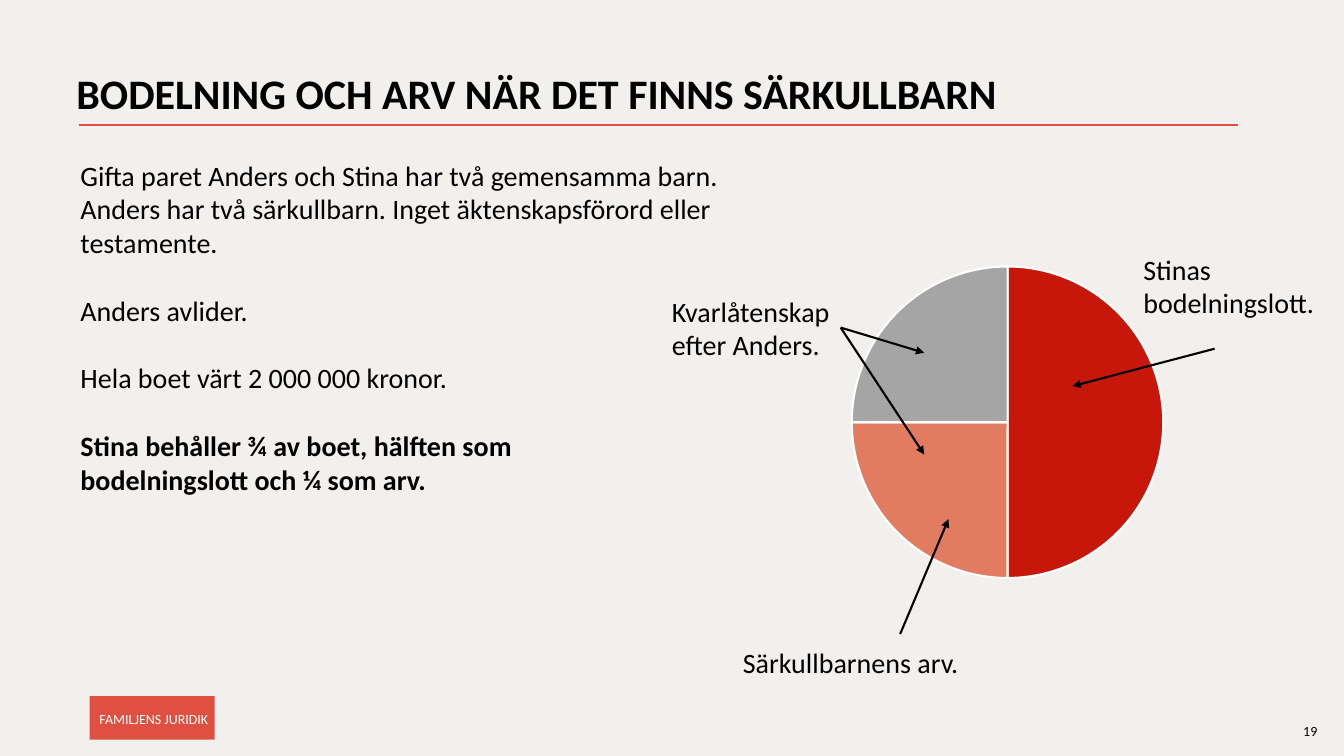
from dataclasses import dataclass

from lxml.etree import SubElement
from pptx import Presentation
from pptx.chart.data import CategoryChartData
from pptx.dml.color import RGBColor
from pptx.enum.chart import XL_CHART_TYPE
from pptx.enum.shapes import MSO_CONNECTOR, MSO_SHAPE
from pptx.enum.text import MSO_ANCHOR
from pptx.oxml import parse_xml
from pptx.oxml.ns import nsdecls, qn
from pptx.slide import Slide
from pptx.text.text import TextFrame
from pptx.util import Pt

FONT = "Calibri"
BLACK, WHITE = "000000", "FFFFFF"
PAPER, ACCENT = "F1F0EC", "E05040"
LINE_GAP = 24.4


@dataclass
class Para:
    lines: tuple[str, ...]
    bold: bool = False


@dataclass
class Block:
    left: float
    top: float
    width: float
    height: float
    paras: tuple[Para, ...]
    size: float = 20
    color: str = BLACK
    # left, top, right, bottom
    insets: tuple[float, float, float, float] = (7.2, 3.6, 7.2, 3.6)
    spacing: float = 1.0
    fill: str = ""


@dataclass
class Stroke:
    start: tuple[float, float]
    end: tuple[float, float]
    color: str = BLACK
    arrow: bool = True


def rgb(value: str) -> RGBColor:
    return RGBColor.from_string(value)


def write_text(frame: TextFrame, block: Block) -> None:
    frame.word_wrap = True
    (frame.margin_left, frame.margin_top,
     frame.margin_right, frame.margin_bottom) = map(Pt, block.insets)
    for index, item in enumerate(block.paras):
        para = frame.add_paragraph() if index else frame.paragraphs[0]
        para.line_spacing = block.spacing
        if index:
            para.space_before = Pt(LINE_GAP)
        for number, line in enumerate(item.lines):
            if number:
                para.add_line_break()
            span = para.add_run()
            span.text = line
            span.font.name = FONT
            span.font.size = Pt(block.size)
            span.font.bold = item.bold
            span.font.color.rgb = rgb(block.color)


def draw_block(page: Slide, block: Block) -> None:
    place = [Pt(v) for v in (block.left, block.top, block.width, block.height)]
    if block.fill:
        box = page.shapes.add_shape(MSO_SHAPE.RECTANGLE, *place)
        box.shadow.inherit = False
        box.fill.solid()
        box.fill.fore_color.rgb = rgb(block.fill)
        box.line.fill.background()
        box.text_frame.vertical_anchor = MSO_ANCHOR.MIDDLE
    else:
        box = page.shapes.add_textbox(*place)
    write_text(box.text_frame, block)
    if block.fill:
        for para in box.text_frame.paragraphs:
            para.alignment = 1


def draw_stroke(page: Slide, stroke: Stroke) -> None:
    ends = [Pt(v) for v in (*stroke.start, *stroke.end)]
    connector = page.shapes.add_connector(MSO_CONNECTOR.STRAIGHT, *ends)
    connector.line.color.rgb = rgb(stroke.color)
    connector.line.width = Pt(1.5)
    if stroke.arrow:
        outline = connector.line._get_or_add_ln()
        SubElement(outline, qn("a:tailEnd"), type="triangle")
    SubElement(connector._element.spPr, qn("a:effectLst"))


def draw_pie(page: Slide) -> None:
    data = CategoryChartData()
    data.categories = ["1", "2", "3"]
    data.add_series("Series 1", (50, 25, 25))
    chart = page.shapes.add_chart(
        XL_CHART_TYPE.PIE, Pt(563.8), Pt(180.7), Pt(311.8), Pt(241.9), data).chart
    chart.has_legend = False
    chart.has_title = False
    chart.font.name = FONT
    chart.font.size = Pt(10)
    chart.font.color.rgb = rgb(BLACK)
    plot = chart.plots[0]
    plot.vary_by_categories = True
    for index, color in enumerate(("C7170A", "E27C61", "A5A5A5")):
        slice_format = plot.series[0].points[index].format
        slice_format.fill.solid()
        slice_format.fill.fore_color.rgb = rgb(color)
        slice_format.line.color.rgb = rgb(WHITE)
        slice_format.line.width = Pt(1.5)
    # Fixed pie size inside the chart frame
    area = chart._chartSpace.chart.plotArea
    for old in area.findall(qn("c:layout")):
        area.remove(old)
    area.insert(0, parse_xml(
        f'<c:layout {nsdecls("c")}><c:manualLayout><c:layoutTarget val="inner"/>'
        '<c:xMode val="edge"/><c:yMode val="edge"/><c:x val="0.14"/><c:y val="0.04"/>'
        '<c:w val="0.72"/><c:h val="0.92"/></c:manualLayout></c:layout>'))


FLUSH = (0, 0, 0, 0)
BLOCKS = (
    # Title, tag and page number
    Block(47.5, 49, 828, 45,
          (Para(("BODELNING OCH ARV NÄR DET FINNS SÄRKULLBARN",), True),),
          size=30, spacing=0.9),
    Block(64, 497.3, 89.4, 31, (Para(("FAMILJENS JURIDIK",)),), size=10,
          color=WHITE, insets=(7.2, 5.8, 0, 3.6), spacing=0.9, fill=ACCENT),
    Block(923.8, 512.6, 28.8, 19.4, (Para(("19",)),), size=10),
    # Case description
    Block(50.4, 109.4, 480.2, 250, (
        Para(("Gifta paret Anders och Stina har två gemensamma barn. ",
              "Anders har två särkullbarn. Inget äktenskapsförord eller testamente.")),
        Para(("Anders avlider.",)),
        Para(("Hela boet värt 2 000 000 kronor.",)),
        Para(("Stina behåller ¾ av boet, hälften som",
              "bodelningslott och ¼ som arv."), True),
    )),
    # Pie labels
    Block(816.7, 180, 130, 48.5, (Para(("Stinas ", "bodelningslott.")),), insets=FLUSH),
    Block(480, 210, 120, 48.5, (Para(("Kvarlåtenskap ", "efter Anders.")),), insets=FLUSH),
    Block(530.6, 460.8, 163, 24.5, (Para(("Särkullbarnens arv.",)),), insets=FLUSH),
)
ESTATE = (600.5, 234)
STROKES = (
    Stroke((56.2, 89.3), (884.2, 89.3), ACCENT, arrow=False),
    Stroke(ESTATE, (660.2, 252)),
    Stroke(ESTATE, (660.2, 324.7)),
    Stroke((643, 452.9), (677.5, 370.8)),
    Stroke((867.6, 249.1), (766.1, 275.8)),
)


def main() -> None:
    deck = Presentation()
    deck.slide_width, deck.slide_height = Pt(960), Pt(540)
    page = deck.slides.add_slide(deck.slide_layouts[6])
    page.background.fill.solid()
    page.background.fill.fore_color.rgb = rgb(PAPER)
    draw_pie(page)
    for stroke in STROKES:
        draw_stroke(page, stroke)
    for block in BLOCKS:
        draw_block(page, block)
    deck.save("out.pptx")


if __name__ == "__main__":
    main()
